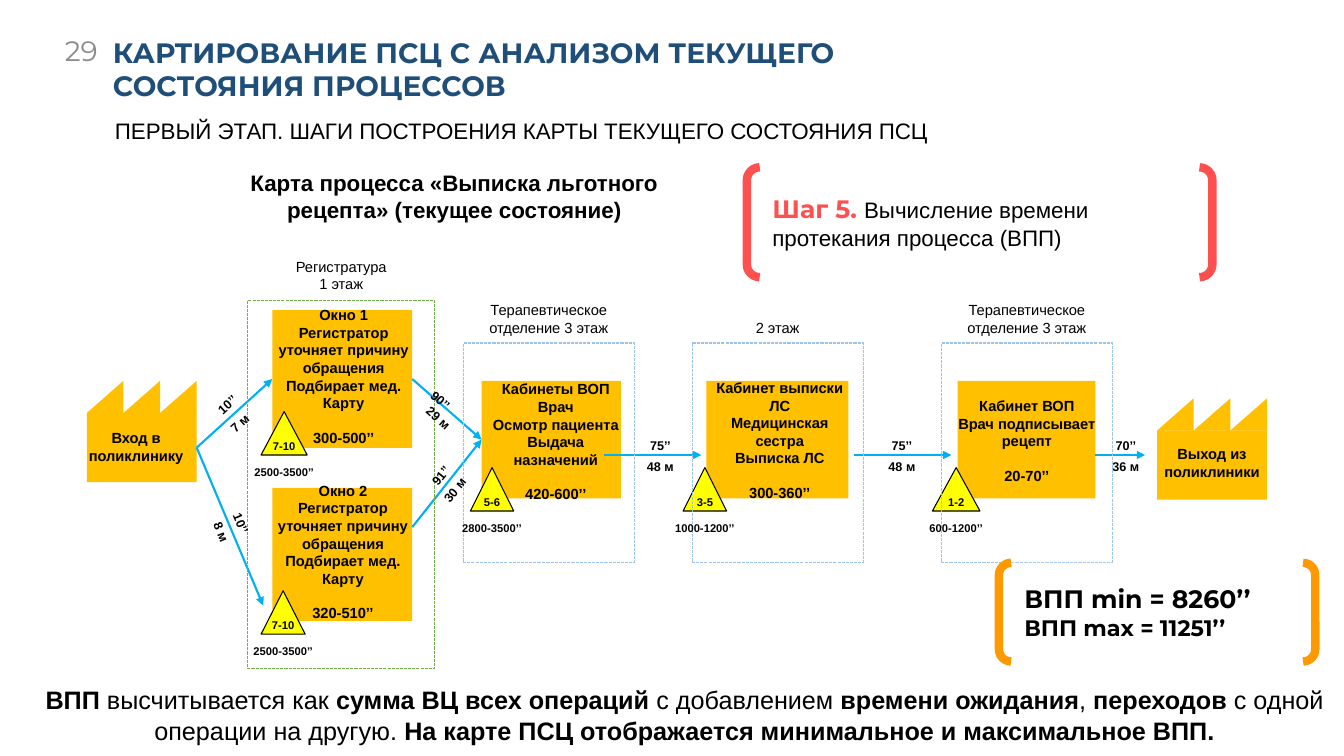
"""Build the slide with the current-state value stream map and its lead time."""
from dataclasses import dataclass

from pptx import Presentation
from pptx.dml.color import RGBColor
from pptx.enum.dml import MSO_LINE
from pptx.enum.shapes import MSO_CONNECTOR, MSO_SHAPE
from pptx.enum.text import MSO_ANCHOR, MSO_AUTO_SIZE, PP_ALIGN
from pptx.oxml.ns import qn
from pptx.util import Pt

RECT, TRIANGLE = MSO_SHAPE.RECTANGLE, MSO_SHAPE.ISOSCELES_TRIANGLE
BRACKETS, STRAIGHT = MSO_SHAPE.DOUBLE_BRACKET, MSO_CONNECTOR.STRAIGHT
LEFT, CENTER, RIGHT = PP_ALIGN.LEFT, PP_ALIGN.CENTER, PP_ALIGN.RIGHT
TOP, MIDDLE = MSO_ANCHOR.TOP, MSO_ANCHOR.MIDDLE
DASH, NO_FIT = MSO_LINE.SQUARE_DOT, MSO_AUTO_SIZE.NONE


@dataclass(frozen=True)
class Theme:
    """Fonts, type sizes and colours of the slide."""
    body: str = "Arial"
    head: str = "Montserrat"
    title: float = 20
    large: float = 18
    text: float = 16
    step: float = 10.5
    move: float = 9
    wait: float = 8
    black: str = "000000"
    white: str = "FFFFFF"
    grey: str = "8B8B8B"
    navy: str = "1F4E79"
    amber: str = "FFC000"
    yellow: str = "FFFF00"
    arrow: str = "00B0F0"
    green: str = "70AD47"
    blue: str = "9DC3E6"
    orange: str = "FF9900"
    red: str = "FF5050"


T = Theme()

NUMBER = "29"
TITLE = "КАРТИРОВАНИЕ ПСЦ С АНАЛИЗОМ ТЕКУЩЕГО СОСТОЯНИЯ ПРОЦЕССОВ"
SUBTITLE = "ПЕРВЫЙ ЭТАП. ШАГИ ПОСТРОЕНИЯ КАРТЫ ТЕКУЩЕГО СОСТОЯНИЯ ПСЦ"
MAP_NAME = "Карта процесса «Выписка льготного рецепта» (текущее состояние)"
SUMMARY = [("ВПП", True), (" высчитывается как ", False), ("сумма ВЦ всех операций ", True),
           ("с добавлением ", False), ("времени ожидания", True), (", ", False),
           ("переходов", True), (" с одной операции на другую. ", False),
           ("На карте ПСЦ отображается минимальное и максимальное ВПП.", True)]

REGISTRAR = ["Регистратор уточняет причину обращения", "Подбирает мед. Карту"]
STATIONS = {
    "doctor": ((344, 272, 99.5, 84), (342.5, 268, 109, 96),
               ["Кабинеты ВОП", "Врач", "Осмотр пациента", "Выдача назначений", "420-600’’"]),
    "nurse": ((504.5, 272, 101.5, 84), (497, 267, 120, 109),
              ["Кабинет выписки", "ЛС", "Медицинская сестра", "Выписка ЛС", "300-360’’"]),
    "signing": ((684, 272, 98.5, 84), (674, 280, 119, 84),
                ["Кабинет ВОП", "Врач подписывает рецепт", "20-70’’"]),
    "window1": ((194.5, 221.5, 100, 98.5), (189.5, 215, 112, 109),
                ["Окно 1", *REGISTRAR, "300-500’’"]),
    "window2": ((194.5, 348.5, 100, 95), (185, 340.5, 120, 122),
                ["Окно 2", *REGISTRAR, "320-510’’"]),
}
GATES = {
    "entrance": (62, 272, (54, 303, 86.5, 32.5), "Вход в поликлинику"),
    "exit": (826.5, 284.5, (820, 314.5, 91.5, 32.5), "Выход из поликлиники"),
}
WAITS = [(186.5, 294, 33, "7-10", "2500-3500’’"), (186.5, 422, 31.5, "7-10", "2500-3500’’"),
         (336, 334, 31, "5-6", "2800-3500’’"), (488, 334, 31, "3-5", "1000-1200’’"),
         (666, 334, 34, "1-2", "600-1200’’")]
ARROWS = [((140.5, 320), (194.5, 271), "entrance", "window1"),
          ((140.5, 320), (188, 432.5), "entrance", None),
          ((294.5, 271), (344, 314), "window1", "doctor"),
          ((294.5, 376.5), (344, 314), None, "doctor"),
          ((431.5, 325), (501, 325), None, None),
          ((610, 325), (679.5, 325), None, None),
          ((782.5, 325), (818, 325), None, None)]
ZONES = [((177, 214.5, 133.5, 263), T.green, 180.5, ["Регистратура", "1 этаж"]),
         ((331, 245, 122, 157), T.blue, 211.5, ["Терапевтическое отделение 3 этаж"]),
         ((494.5, 245, 122, 157), T.blue, 224.5, ["2 этаж"]),
         ((672.5, 245, 122, 157), T.blue, 211.5, ["Терапевтическое отделение 3 этаж"])]
MOVES = [(142, 365, 67.3, "10’’"), (128, 371, 68.1, "8 м"),
         (132, 280, 318.4, "10’’"), (141, 293, 317.9, "7 м"),
         (284.5, 330.5, 308.7, "91’’"), (294.5, 341, 308.7, "30 м"),
         (284.5, 277, 41.6, "90’’"), (283, 289.5, 41.6, "29 м"),
         (441.5, 309, 0, "75’’"), (441.5, 324.5, 0, "48 м"),
         (614, 309, 0, "75’’"), (614, 324.5, 0, "48 м"),
         (774, 309, 0, "70’’"), (774, 324.5, 0, "36 м")]
CALLOUTS = [
    ((713.5, 402, 226, 70.5), 0.124, T.orange,
     [[("ВПП min = 8260’’", T.large, T.head, T.black, True)],
      [("ВПП max = 11251’’", T.text, T.head, T.black, True)]]),
    ((533.5, 119.5, 332.5, 78.5), 0.117, T.red,
     [[("Шаг 5. ", T.large, T.head, T.red, True),
       ("Вычисление времени протекания процесса (ВПП)", T.text, T.body, T.black, False)]]),
]


def points(values):
    return [Pt(v) for v in values]


def write(tf, paragraphs, align=CENTER, anchor=TOP, indent=0):
    tf.word_wrap = True
    tf.auto_size = NO_FIT
    tf.vertical_anchor = anchor
    for i, runs in enumerate(paragraphs):
        p = tf.paragraphs[0] if i == 0 else tf.add_paragraph()
        p.alignment = align
        if indent:
            p._p.get_or_add_pPr().set("marL", str(Pt(indent)))
        for text, size, face, color, bold in runs:
            r = p.add_run()
            r.text = text
            r.font.size, r.font.name, r.font.bold = Pt(size), face, bold
            r.font.color.rgb = RGBColor.from_string(color)
    return tf


def plain(lines, size, bold=True):
    return [[(line, size, T.body, T.black, bold)] for line in lines]


def add_text(s, rect, paragraphs, **layout):
    sp = s.shapes.add_textbox(*points(rect))
    write(sp.text_frame, paragraphs, **layout)
    return sp


def add_shape(s, kind, rect, fill=None, line=None, width=0.75, adjust=None):
    sp = s.shapes.add_shape(kind, *points(rect))
    sp.shadow.inherit = False
    if adjust is not None:
        sp.adjustments[0] = adjust
    if fill:
        sp.fill.solid()
        sp.fill.fore_color.rgb = RGBColor.from_string(fill)
    else:
        sp.fill.background()
    if line:
        sp.line.color.rgb = RGBColor.from_string(line)
        sp.line.width = Pt(width)
    else:
        sp.line.fill.background()
    return sp


def add_gate(s, x, y, label_rect, label):
    tooth, height, body_width = 26.17, 23, 78.5
    for i in range(3):
        add_shape(s, TRIANGLE, (x + i * tooth, y, tooth, height), T.amber, adjust=1)
    body = add_shape(s, RECT, (x, y + height, body_width, 49.5), T.amber)
    add_text(s, label_rect, plain([label], T.step))
    return body


def add_arrow(s, start, end, source, target):
    cxn = s.shapes.add_connector(STRAIGHT, *points(start + end))
    if source:
        cxn.begin_connect(source, 3)
    if target:
        cxn.end_connect(target, 1)
    cxn.line.color.rgb = RGBColor.from_string(T.arrow)
    cxn.line.width = Pt(1.5)
    spPr = cxn._element.spPr
    ln = spPr.get_or_add_ln()
    ln.append(ln.makeelement(qn("a:tailEnd"), {"type": "triangle"}))
    spPr.append(spPr.makeelement(qn("a:effectLst"), {}))


def add_headings(s):
    title = s.shapes.title
    title.left, title.top, title.width, title.height = points((73.5, 29.5, 591, 39.5))
    tf = write(title.text_frame, [[(TITLE, T.title, T.head, T.navy, True)]], LEFT, MIDDLE)
    tf.paragraphs[0].line_spacing = 1.0
    add_text(s, (0, 16.5, 77, 39), [[(NUMBER, T.title, T.head, T.grey, False)]],
             align=RIGHT, anchor=MIDDLE)
    add_text(s, (75, 80, 612.5, 26.5), plain([SUBTITLE], T.text, False), align=LEFT)
    add_text(s, (165.5, 117.5, 318, 46), plain([MAP_NAME], T.text))
    add_text(s, (18, 485.5, 942, 51),
             [[(text, T.large, T.body, T.black, bold) for text, bold in SUMMARY]])


def add_map(s):
    nodes = {}
    for name, (rect, text_rect, lines) in STATIONS.items():
        nodes[name] = add_shape(s, RECT, rect, T.amber)
        sp = add_text(s, text_rect, plain(lines, T.step))
        sp.text_frame.paragraphs[-1].space_before = Pt(12)
    for name, gate in GATES.items():
        nodes[name] = add_gate(s, *gate)
    for x, y, width, _, _ in WAITS:
        add_shape(s, TRIANGLE, (x, y, width, 31), T.yellow, T.black)
    for start, end, source, target in ARROWS:
        add_arrow(s, start, end, nodes.get(source), nodes.get(target))
    for rect, color, label_top, lines in ZONES:
        add_shape(s, RECT, rect, line=color).line.dash_style = DASH
        label_left = rect[0] + rect[2] / 2 - 67.25
        add_text(s, (label_left, label_top, 134.5, 32.5), plain(lines, T.step, False))
    for x, y, width, stock, time in WAITS:
        for text, box, drop in ((stock, 34.5, 16), (time, 60.5, 35)):
            add_text(s, (x + (width - box) / 2, y + drop, box, 17), plain([text], T.wait))
    for x, y, angle, text in MOVES:
        add_text(s, (x, y, 60.5, 18), plain([text], T.move)).rotation = angle


def main():
    prs = Presentation()
    prs.slide_width, prs.slide_height = Pt(960), Pt(540)
    s = prs.slides.add_slide(prs.slide_layouts[5])
    add_headings(s)
    add_map(s)
    for rect, adjust, color, paragraphs in CALLOUTS:
        sp = add_shape(s, BRACKETS, rect, T.white, color, 6, adjust)
        write(sp.text_frame, paragraphs, LEFT, MIDDLE, 8.5)
    prs.save("out.pptx")


if __name__ == "__main__":
    main()
